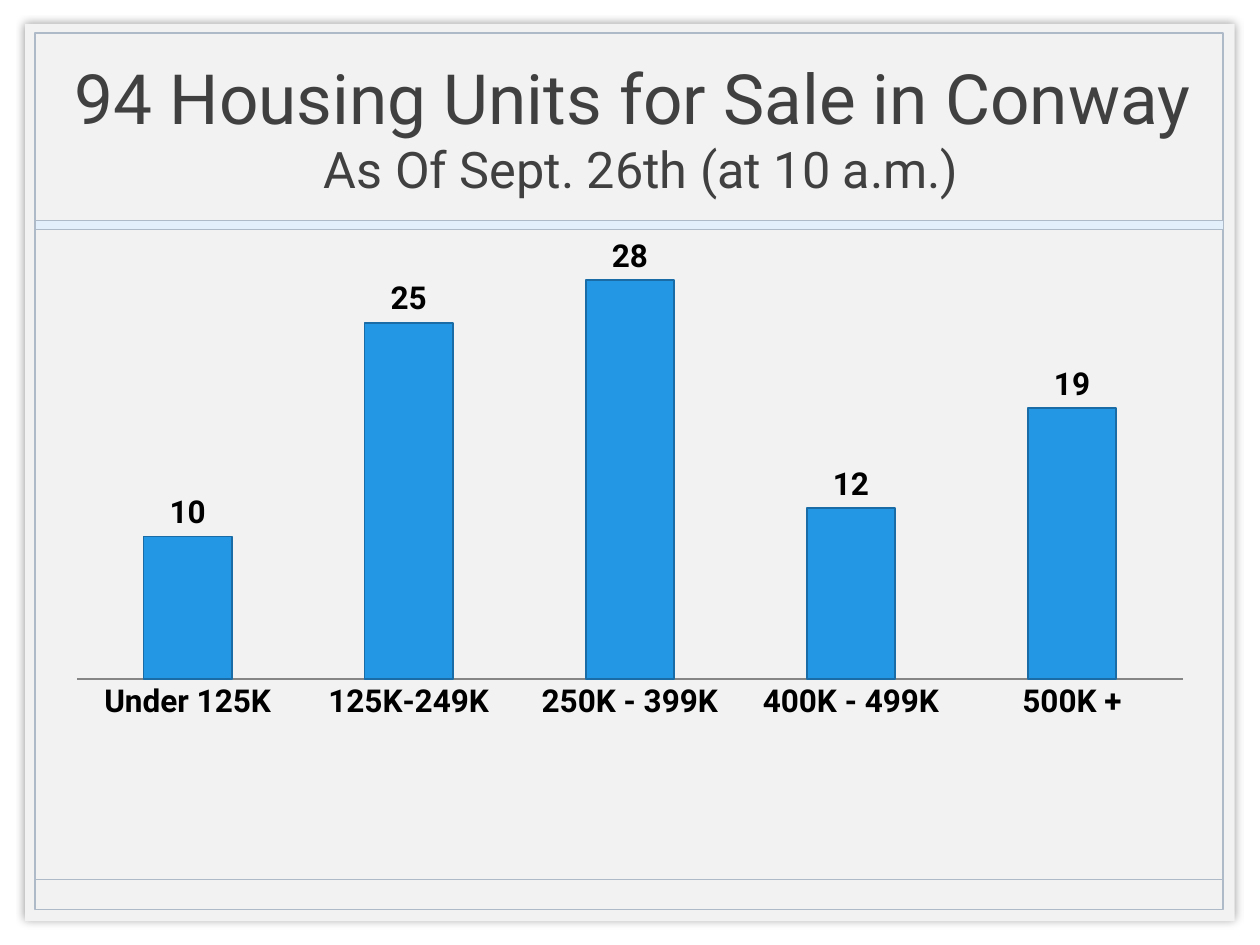
from dataclasses import dataclass

from lxml import etree
from pptx import Presentation
from pptx.chart.data import CategoryChartData
from pptx.dml.color import RGBColor
from pptx.enum.chart import XL_CHART_TYPE, XL_LABEL_POSITION, XL_TICK_MARK
from pptx.enum.shapes import MSO_CONNECTOR, MSO_SHAPE
from pptx.enum.text import MSO_ANCHOR, MSO_AUTO_SIZE, PP_ALIGN
from pptx.oxml import parse_xml
from pptx.oxml.ns import nsdecls, qn
from pptx.util import Inches, Pt

RECT = MSO_SHAPE.RECTANGLE
STRAIGHT = MSO_CONNECTOR.STRAIGHT
COLUMN = XL_CHART_TYPE.COLUMN_CLUSTERED
OUTSIDE = XL_LABEL_POSITION.OUTSIDE_END
NO_TICK = XL_TICK_MARK.NONE


@dataclass(frozen=True)
class Theme:
    font: str = "Roboto"
    paper: str = "F2F2F2"
    rule: str = "AFBAC8"
    band: str = "E4EFFC"
    title: str = "404040"
    label: str = "000000"
    bar: str = "2397E3"
    edge: str = "1A6CA6"
    axis: str = "868686"
    head_size: float = 39.6
    sub_size: float = 28.8
    chart_size: float = 18


THEME = Theme()
LEFT, RIGHT = 0.28, 9.71
WIDTH = RIGHT - LEFT
SALES = {
    "Under 125K": 10,
    "125K-249K": 25,
    "250K - 399K": 28,
    "400K - 499K": 12,
    "500K +": 19,
}


def rgb(code):
    return RGBColor.from_string(code)


def style_font(font, size, color, bold=False):
    values = {"name": THEME.font, "size": Pt(size), "bold": bold}
    for name, value in values.items():
        setattr(font, name, value)
    font.color.rgb = rgb(color)


def style_line(line, color, width):
    line.color.rgb = rgb(color)
    line.width = Pt(width)


def add_rect(slide, box, fill=None, line=None, width=1):
    shape = slide.shapes.add_shape(RECT, *map(Inches, box))
    shape.shadow.inherit = False
    if fill:
        shape.fill.solid()
        shape.fill.fore_color.rgb = rgb(fill)
    else:
        shape.fill.background()
    if line:
        style_line(shape.line, line, width)
    else:
        shape.line.fill.background()
    return shape


def add_glow(shape):
    """Give the shape a soft, centred shadow."""
    effects = shape._element.spPr.find(qn("a:effectLst"))
    effects.append(parse_xml(
        f'<a:outerShdw {nsdecls("a")} blurRad="{Pt(5)}" dist="0" dir="0">'
        '<a:srgbClr val="000000"><a:alpha val="40000"/></a:srgbClr>'
        '</a:outerShdw>'))


def add_rule(slide, y):
    ends = map(Inches, (LEFT, y, RIGHT, y))
    rule = slide.shapes.add_connector(STRAIGHT, *ends)
    style_line(rule.line, THEME.rule, 1)
    etree.SubElement(rule._element.spPr, qn("a:effectLst"))


def add_frame(slide):
    add_glow(add_rect(slide, (0.2, 0.19, 9.6, 7.12), THEME.paper))
    add_rect(slide, (LEFT, 0.26, WIDTH, 6.96), line=THEME.rule)
    add_rule(slide, 6.98)
    add_rect(slide, (LEFT, 1.75, WIDTH, 0.07), THEME.band, THEME.rule, 0.25)


def set_title(slide, head, sub):
    title = slide.shapes.title
    slide.shapes._spTree.append(title._element)  # bring above the frame
    box = {"left": 0.43, "top": 0.27, "width": 9.32, "height": 1.47}
    for name, value in box.items():
        setattr(title, name, Inches(value))
    frame = title.text_frame
    frame.word_wrap = True
    frame.auto_size = MSO_AUTO_SIZE.NONE
    frame.vertical_anchor = MSO_ANCHOR.MIDDLE
    para = frame.paragraphs[0]
    para.alignment = PP_ALIGN.CENTER
    run = para.add_run()
    run.text = head
    style_font(run.font, THEME.head_size, THEME.title)
    para.add_line_break()
    run = para.add_run()
    run.text = sub
    style_font(run.font, THEME.sub_size, THEME.title)


def set_plot(chart, **layout):
    """Fix the inner plot area, in fractions of the chart."""
    area = chart._chartSpace.chart.plotArea
    for old in area.findall(qn("c:layout")):
        area.remove(old)
    parts = {"layoutTarget": "inner", "xMode": "edge", "yMode": "edge", **layout}
    node = etree.Element(qn("c:layout"))
    manual = etree.SubElement(node, qn("c:manualLayout"))
    for name, value in parts.items():
        etree.SubElement(manual, qn(f"c:{name}")).set("val", str(value))
    area.insert(0, node)


def add_bars(slide, sales):
    data = CategoryChartData()
    data.categories = sales.keys()
    data.add_series("Series 1", sales.values())
    box = map(Inches, (0.43, 1.88, 9.14, 3.9))
    chart = slide.shapes.add_chart(COLUMN, *box, data).chart
    chart.has_legend = chart.has_title = False
    style_font(chart.font, THEME.chart_size, THEME.label)
    set_plot(chart, x=0.02, y=0.03, w=0.96, h=0.87)

    cats, vals = chart.category_axis, chart.value_axis
    cats.major_tick_mark = cats.minor_tick_mark = NO_TICK
    style_font(cats.tick_labels.font, THEME.chart_size, THEME.label, True)
    style_line(cats.format.line, THEME.axis, 1)
    limits = {"minimum_scale": 0, "maximum_scale": 30,
              "has_major_gridlines": False, "visible": False}
    for name, value in limits.items():
        setattr(vals, name, value)

    plot = chart.plots[0]
    plot.gap_width, plot.overlap = 150, -25
    plot.vary_by_categories = False
    series = plot.series[0]
    series.format.fill.solid()
    series.format.fill.fore_color.rgb = rgb(THEME.bar)
    style_line(series.format.line, THEME.edge, 1)
    labels = series.data_labels
    labels.show_value = True
    labels.position = OUTSIDE
    style_font(labels.font, THEME.chart_size, THEME.label, True)


def main():
    deck = Presentation()
    deck.slide_width, deck.slide_height = Inches(10), Inches(7.5)
    slide = deck.slides.add_slide(deck.slide_layouts[5])
    add_frame(slide)
    set_title(slide, "94 Housing Units for Sale in Conway ",
              "As Of Sept. 26th (at 10 a.m.)")
    add_bars(slide, SALES)
    deck.save("out.pptx")


if __name__ == "__main__":
    main()
